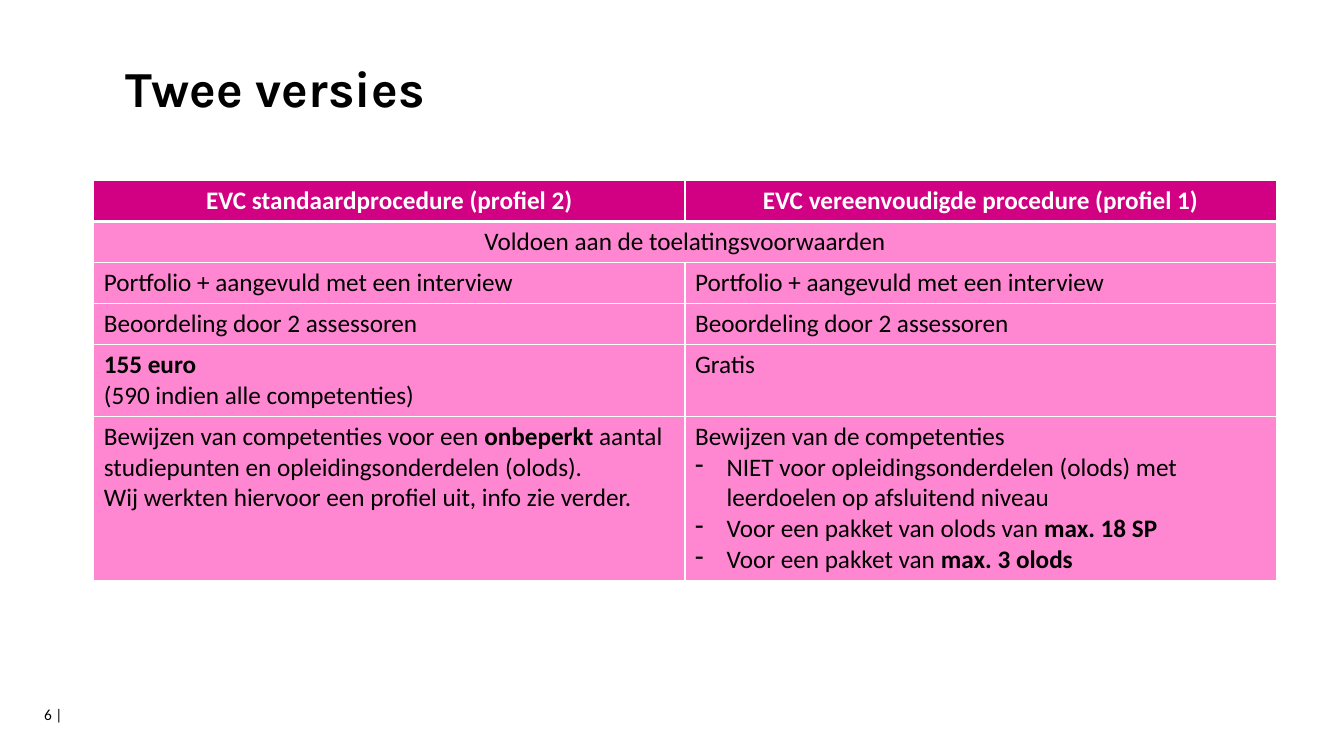
from pptx import Presentation
from pptx.dml.color import RGBColor
from pptx.enum.text import MSO_ANCHOR, PP_ALIGN
from pptx.oxml.ns import qn
from pptx.util import Pt
from lxml import etree

TOP, LEFT, MID = MSO_ANCHOR.TOP, PP_ALIGN.LEFT, PP_ALIGN.CENTER
BLACK, WHITE, PINK, DARK = "000000", "FFFFFF", "FF87D1", "D20082"
INDENT = 22.5

# Each cell is a list of paragraphs: *...* is bold, "- " starts a bullet
HEAD = ["*EVC standaardprocedure (profiel 2)*",
        "*EVC vereenvoudigde procedure (profiel 1)*"]
ROWS = [
    [[HEAD[0]], [HEAD[1]]],
    [["Voldoen aan de toelatingsvoorwaarden"], []],
    [["Portfolio + aangevuld met een interview"]] * 2,
    [["Beoordeling door 2 assessoren"]] * 2,
    [["*155 euro*\n(590 indien alle competenties)"], ["Gratis"]],
    [["Bewijzen van competenties voor een *onbeperkt *aantal "
      "studiepunten en opleidingsonderdelen (olods).",
      "Wij werkten hiervoor een profiel uit, info zie verder."],
     ["Bewijzen van de competenties",
      "- NIET voor opleidingsonderdelen (olods) met "
      "leerdoelen op afsluitend niveau",
      "- Voor een pakket van olods van *max. 18 SP*",
      "- Voor een pakket van *max. 3 olods*"]],
]
HIGH = [29.3, 29.3, 29.3, 29.3, 50.5, 117]


def rgb(code):
    return RGBColor.from_string(code)


class Page:
    font = "Calibri"

    def __init__(self, slide):
        self.slide = slide

    def style(self, run, size, color=BLACK, bold=False, font=font):
        run.font.name, run.font.size = font, Pt(size)
        run.font.bold = bold
        run.font.color.rgb = rgb(color)

    def title(self, text, x, y, w, h):
        shape = self.slide.shapes.title
        shape.left, shape.top = Pt(x), Pt(y)
        shape.width, shape.height = Pt(w), Pt(h)
        frame = shape.text_frame
        frame.text = text
        frame.vertical_anchor = TOP
        frame.margin_left = Pt(5)
        para = frame.paragraphs[0]
        para.alignment, para.line_spacing = LEFT, 0.9
        self.style(para.runs[0], 36, bold=True, font="Karla")

    def label(self, text, x, y, w, h):
        box = self.slide.shapes.add_textbox(Pt(x), Pt(y), Pt(w), Pt(h))
        frame = box.text_frame
        frame.word_wrap = True
        frame.text = text
        self.style(frame.paragraphs[0].runs[0], 11)

    def bullet(self, para):
        props = para._p.get_or_add_pPr()
        props.set("marL", str(Pt(INDENT)))
        props.set("indent", str(-Pt(INDENT)))
        etree.SubElement(props, qn("a:buChar")).set("char", "-")

    def para(self, para, text, color, align):
        para.alignment = align
        if text.startswith("- "):
            self.bullet(para)
            text = text[2:]
        for i, part in enumerate(text.split("*")):
            for j, line in enumerate(part.split("\n")):
                if j:
                    para.add_line_break()
                if line:
                    run = para.add_run()
                    run.text = line
                    self.style(run, 18, color, i % 2 == 1)

    def border(self, cell, row):
        props = cell._tc.get_or_add_tcPr()
        thick = {0: "B", 1: "T"}.get(row)
        for side in "LRTB":
            line = etree.SubElement(props, qn("a:ln" + side))
            line.set("w", str(Pt(3 if side == thick else 1)))
            fill = etree.SubElement(line, qn("a:solidFill"))
            etree.SubElement(fill, qn("a:srgbClr")).set("val", WHITE)

    def cell(self, cell, texts, row):
        self.border(cell, row)
        cell.fill.solid()
        cell.fill.fore_color.rgb = rgb(PINK if row else DARK)
        frame = cell.text_frame
        for i, text in enumerate(texts):
            para = frame.add_paragraph() if i else frame.paragraphs[0]
            self.para(para, text, BLACK if row else WHITE,
                      MID if row < 2 else LEFT)

    def table(self, rows, high, x, y, w):
        wide = len(rows[0])
        table = self.slide.shapes.add_table(
            len(rows), wide, Pt(x), Pt(y), Pt(w), Pt(sum(high))).table
        for col in table.columns:
            col.width = Pt(w / wide)
        for r, texts in enumerate(rows):
            table.rows[r].height = Pt(high[r])
            for c, text in enumerate(texts):
                self.cell(table.cell(r, c), text, r)
        return table


def main():
    deck = Presentation()
    deck.slide_width, deck.slide_height = Pt(960), Pt(540)
    page = Page(deck.slides.add_slide(deck.slide_layouts[5]))

    # Comparison table, with one shared row under the header
    table = page.table(ROWS, HIGH, 67, 129, 844.6)
    table.cell(1, 0).merge(table.cell(1, 1))

    # Title and page number
    page.title("Twee versies", 85, 42, 844.6, 68.4)
    page.label("6 |", 24.5, 500.4, 60.5, 28.8)

    deck.save("out.pptx")


if __name__ == "__main__":
    main()
